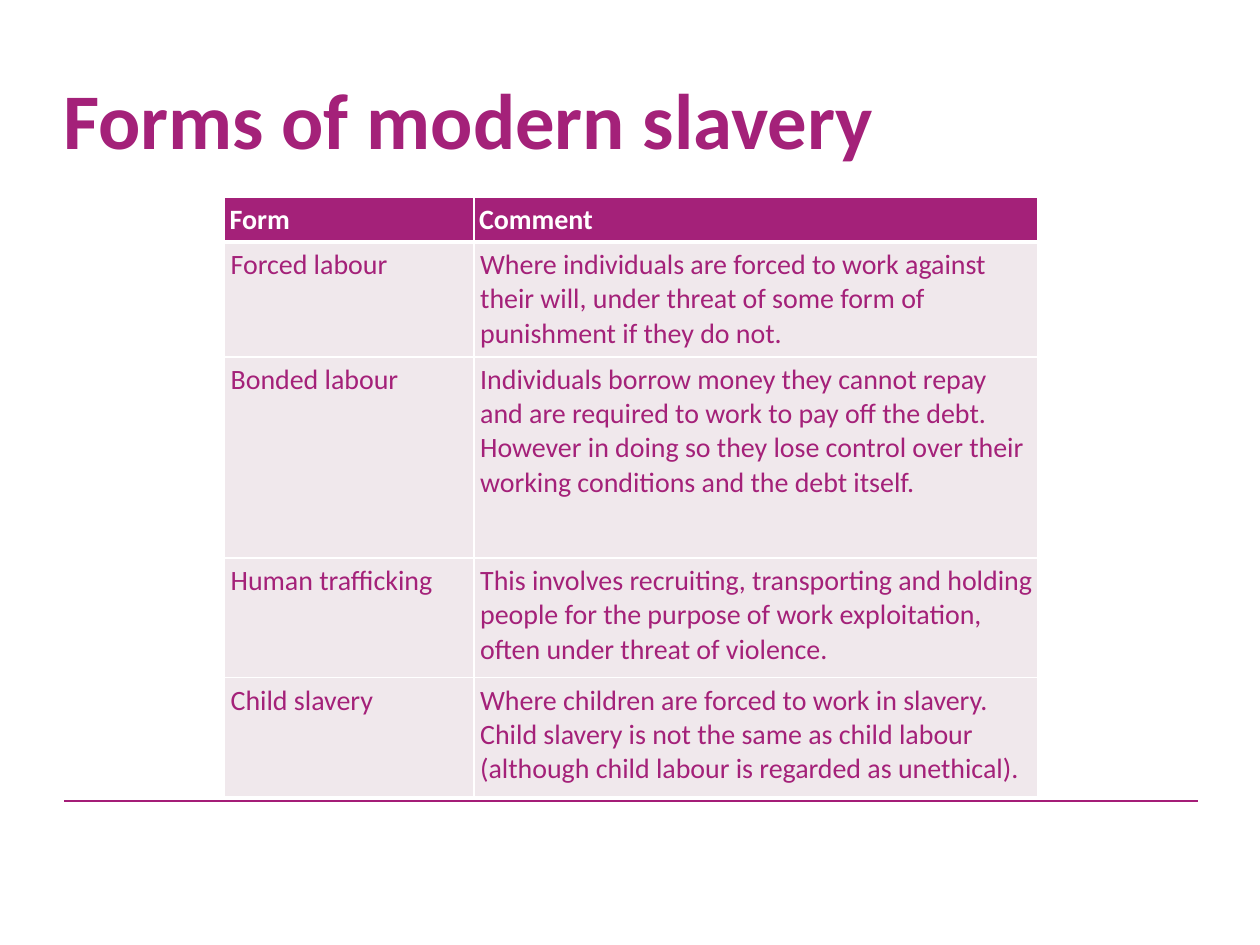
from lxml import etree
from pptx import Presentation
from pptx.dml.color import RGBColor
from pptx.enum.shapes import MSO_CONNECTOR
from pptx.enum.text import MSO_ANCHOR, MSO_AUTO_SIZE, PP_ALIGN
from pptx.oxml.ns import qn
from pptx.util import Cm, Pt

STRAIGHT = MSO_CONNECTOR.STRAIGHT
TOP = MSO_ANCHOR.TOP
LEFT = PP_ALIGN.LEFT
NO_AUTOFIT = MSO_AUTO_SIZE.NONE

COLORS = {"plum": "A42179", "rule": "A41D77", "blush": "F0E8EC", "white": "FFFFFF"}
FONT = "Calibri"
TITLE_LAYOUT = 5

COLUMN_WIDTHS = (5.03, 11.35)
ROW_HEIGHTS = (0.87, 2.31, 4.06, 2.41, 2.41)
FORMS = (
    ("Form", "Comment"),
    ("Forced labour",
     "Where individuals are forced to work against their will, "
     "under threat of some form of punishment if they do not."),
    ("Bonded labour",
     "Individuals borrow money they cannot repay and are required to work to pay off "
     "the debt. However in doing so they lose control over their working conditions "
     "and the debt itself."),
    ("Human trafficking",
     "This involves recruiting, transporting and holding people for the purpose of "
     "work exploitation, often under threat of violence."),
    ("Child slavery",
     "Where children are forced to work in slavery. Child slavery is not the same as "
     "child labour (although child labour is regarded as unethical)."),
)


def color(name):
    return RGBColor.from_string(COLORS[name])


def write_text(frame, text, size=16, ink="plum", bold=False, line_spacing=None):
    frame.word_wrap = True
    paragraph = frame.paragraphs[0]
    paragraph.alignment = LEFT
    if line_spacing:
        paragraph.line_spacing = Pt(line_spacing)
    run = paragraph.add_run()
    run.text = text
    run.font.name = FONT
    run.font.size = Pt(size)
    run.font.bold = bold
    run.font.color.rgb = color(ink)


def set_borders(cell, **widths):
    properties = cell._tc.get_or_add_tcPr()
    for side in ("L", "R", "T", "B"):
        width = Pt(widths.get(side, 1))
        border = etree.SubElement(properties, qn(f"a:ln{side}"), w=str(width))
        fill = etree.SubElement(border, qn("a:solidFill"))
        etree.SubElement(fill, qn("a:srgbClr"), val=COLORS["white"])


def add_title(slide, left, top, width, height):
    title = slide.shapes.title
    title.left, title.top, title.width, title.height = map(Cm, (left, top, width, height))
    frame = title.text_frame
    frame.margin_left = frame.margin_right = frame.margin_top = frame.margin_bottom = 0
    frame.vertical_anchor = TOP
    frame.auto_size = NO_AUTOFIT
    write_text(frame, "Forms of modern slavery", size=45, bold=True, line_spacing=45)


def add_footer_rule(slide, left, top, width):
    rule = slide.shapes.add_connector(
        STRAIGHT, Cm(left), Cm(top), Cm(left + width), Cm(top))
    rule.line.color.rgb = color("rule")
    rule.line.width = Pt(0.75)
    etree.SubElement(rule._element.spPr, qn("a:effectLst"))


def add_forms_table(slide, left, top, width, height):
    table = slide.shapes.add_table(
        len(FORMS), len(COLUMN_WIDTHS), Cm(left), Cm(top), Cm(width), Cm(height)).table
    table.horz_banding = False
    for column, share in zip(table.columns, COLUMN_WIDTHS):
        column.width = Cm(width * share / sum(COLUMN_WIDTHS))
    for row, share in zip(table.rows, ROW_HEIGHTS):
        row.height = Cm(height * share / sum(ROW_HEIGHTS))
    for row_index, texts in enumerate(FORMS):
        header = row_index == 0
        for column_index, text in enumerate(texts):
            cell = table.cell(row_index, column_index)
            cell.margin_left = Cm(0.1 if header else 0.12)
            cell.margin_right = Cm(0.05)
            cell.margin_top = Cm(0.12)
            cell.margin_bottom = Cm(0.1 if header else 0.12)
            cell.vertical_anchor = TOP
            set_borders(cell, T=3 if row_index == 1 else 1, B=3 if header else 1)
            cell.fill.solid()
            cell.fill.fore_color.rgb = color("plum" if header else "blush")
            write_text(cell.text_frame, text, ink="white" if header else "plum", bold=header)


def main():
    deck = Presentation()
    deck.slide_width, deck.slide_height = Cm(25.4), Cm(19.05)
    slide = deck.slides.add_slide(deck.slide_layouts[TITLE_LAYOUT])
    add_footer_rule(slide, 1.3, 16.15, 22.86)
    add_title(slide, 1.27, 1.75, 22.86, 1.83)
    add_forms_table(slide, 4.53, 3.97, sum(COLUMN_WIDTHS), sum(ROW_HEIGHTS))
    deck.save("out.pptx")


if __name__ == "__main__":
    main()
